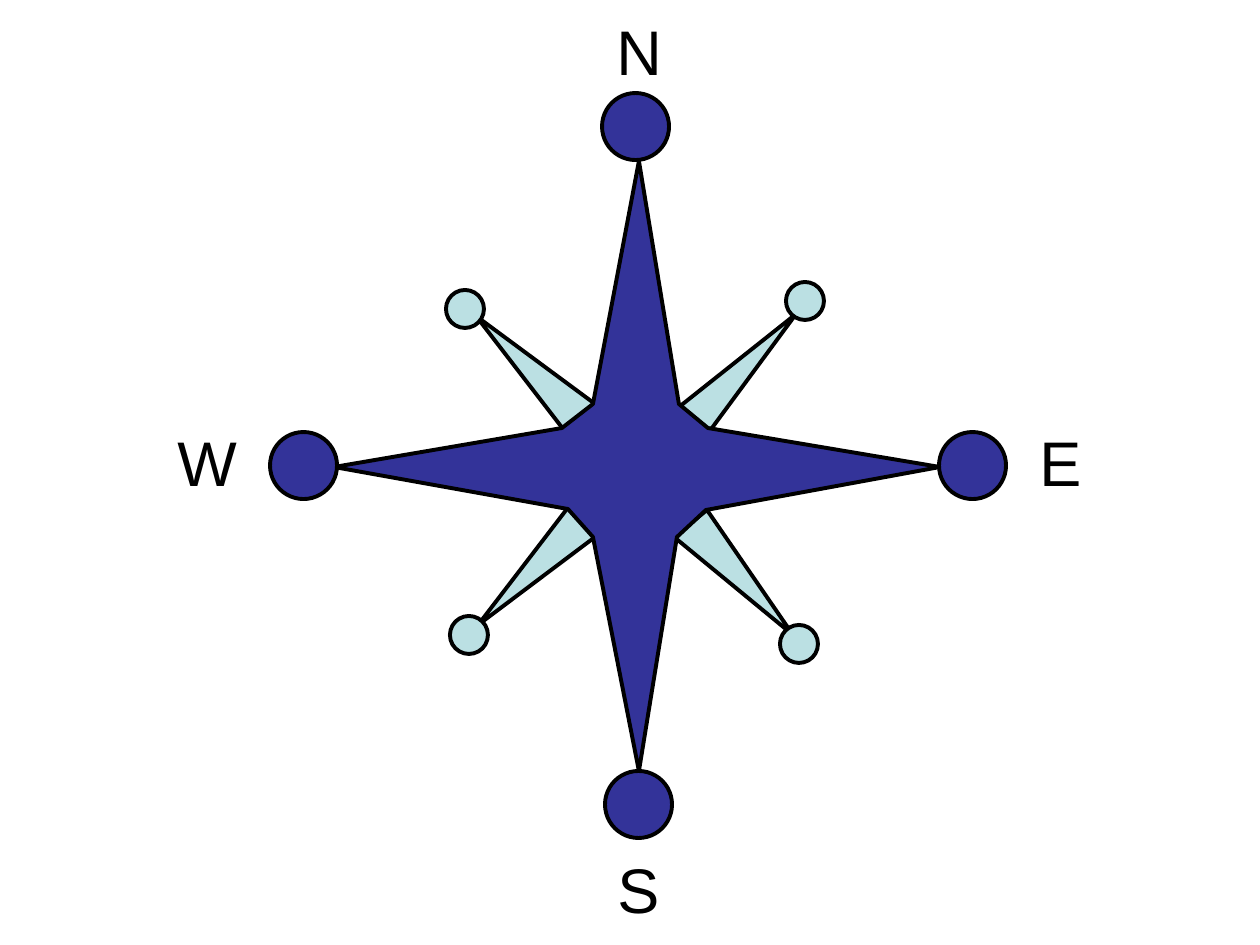
from pptx import Presentation
from pptx.dml.color import RGBColor
from pptx.enum.shapes import MSO_SHAPE as Preset
from pptx.enum.text import MSO_AUTO_SIZE as AutoSize
from pptx.util import Inches, Pt

SCALE = Inches(1) / 126
NAVY = RGBColor(0x33, 0x33, 0x99)
PALE = RGBColor(0xBB, 0xE0, 0xE3)
BLACK = RGBColor(0, 0, 0)

MINOR_POINTS = [
    [(793, 635), (674, 537), (707, 510)],
    [(679, 407), (709, 432), (796, 314)],
    [(570, 438), (595, 404), (476, 316)],
    [(570, 505), (478, 625), (595, 537)],
]
MAIN_STAR = [
    (639, 161), (593, 404), (562, 428), (334, 467), (568, 509), (593, 537),
    (639, 771), (677, 537), (706, 510), (940, 467), (708, 428), (679, 404),
]
CIRCLES = [
    (NAVY, 67, [(939, 432), (605, 771), (270, 432), (602, 93)]),
    (PALE, 38, [(780, 625), (786, 282), (446, 290), (450, 616)]),
]
LABELS = {"N": (604, 6), "S": (605, 844), "E": (1027, 417), "W": (165, 417)}


def px(length):
    return round(length * SCALE)


class CompassSlide:
    """Draws compass parts on one slide in a shared style."""

    label_font = {"name": "Arial", "size": Pt(36)}
    label_frame = {"word_wrap": True, "auto_size": AutoSize.SHAPE_TO_FIT_TEXT}

    def __init__(self, slide):
        self.slide = slide
        self.rose = slide.shapes.add_group_shape()

    def style(self, shape, color):
        shape.shadow.inherit = False
        shape.fill.solid()
        shape.fill.fore_color.rgb = color
        shape.line.color.rgb = BLACK
        shape.line.width = Pt(2.25)

    def polygon(self, points, color):
        builder = self.rose.shapes.build_freeform(*points[0], scale=SCALE)
        builder.add_line_segments(points[1:], close=True)
        self.style(builder.convert_to_shape(), color)

    def circle(self, left, top, size, color):
        box = map(px, (left, top, size, size))
        self.style(self.rose.shapes.add_shape(Preset.OVAL, *box), color)

    def label(self, text, left, top):
        box = map(px, (left, top, 81, 89))
        frame = self.slide.shapes.add_textbox(*box).text_frame
        for name, value in self.label_frame.items():
            setattr(frame, name, value)
        run = frame.paragraphs[0].add_run()
        run.text = text
        for name, value in self.label_font.items():
            setattr(run.font, name, value)
        run.font.color.rgb = BLACK


def main():
    presentation = Presentation()
    presentation.slide_width = Inches(10)
    presentation.slide_height = Inches(7.5)
    blank_layout = presentation.slide_layouts[6]
    compass = CompassSlide(presentation.slides.add_slide(blank_layout))

    for points in MINOR_POINTS:
        compass.polygon(points, PALE)
    compass.polygon(MAIN_STAR, NAVY)
    for color, size, corners in CIRCLES:
        for left, top in corners:
            compass.circle(left, top, size, color)
    for text, (left, top) in LABELS.items():
        compass.label(text, left, top)

    presentation.save("out.pptx")


if __name__ == "__main__":
    main()
